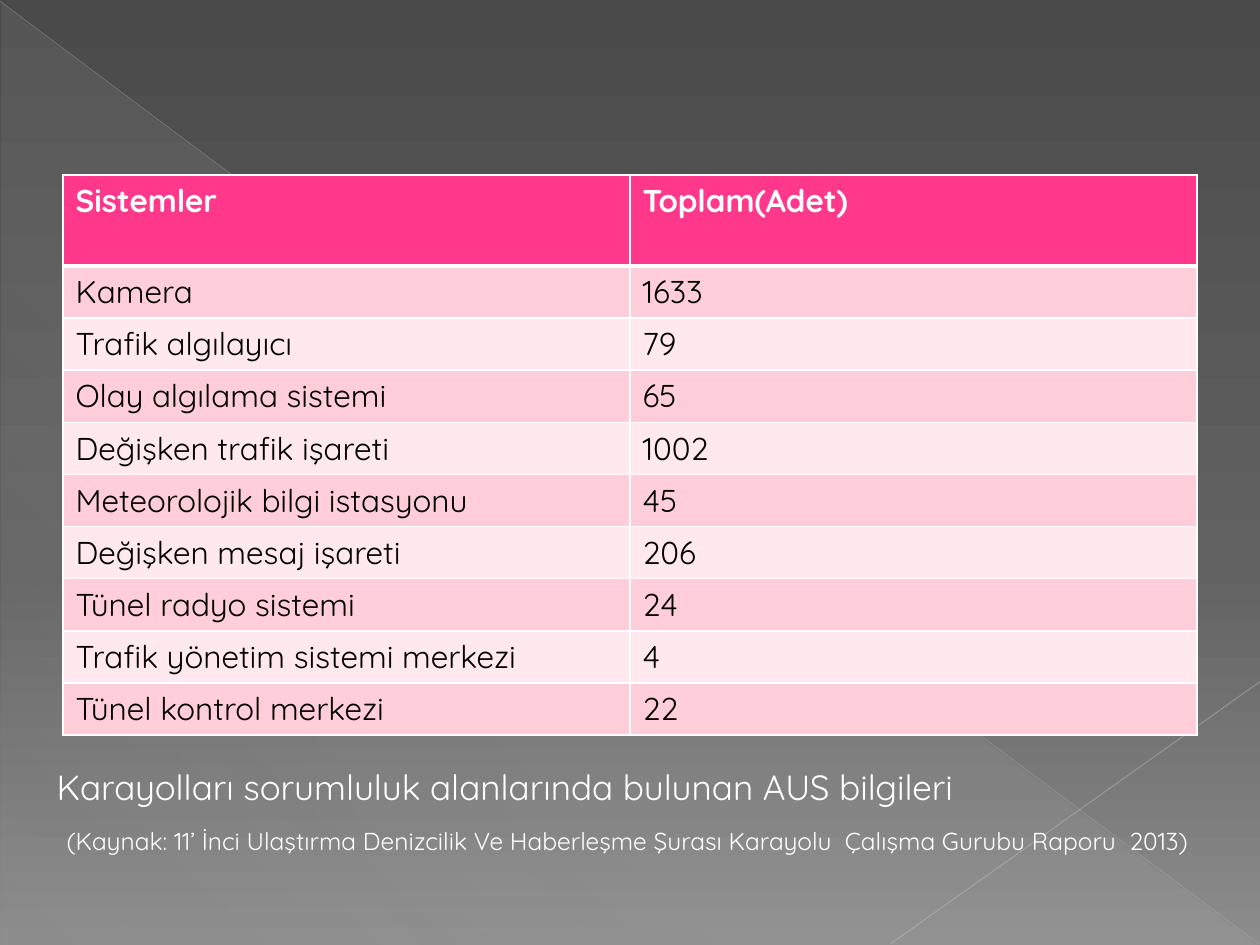
from lxml.etree import SubElement
from pptx import Presentation
from pptx.dml.color import RGBColor
from pptx.enum.shapes import MSO_CONNECTOR as Connector, MSO_SHAPE as Shape
from pptx.enum.text import MSO_AUTO_SIZE as AutoSize, PP_ALIGN as Align
from pptx.oxml.ns import qn
from pptx.util import Inches, Pt

FONT = "Quicksand"
COLORS = {
    "white": "FFFFFF",
    "black": "000000",
    "header": "FF388C",
    "odd_row": "FFCEDA",
    "even_row": "FFE8EE",
    "veil": "D2D2D2",
    "long_ray": "BFBFBF",
    "short_ray": "C6C6C6",
    "sky_top": "4A4A4A",
    "sky_middle": "626262",
    "sky_bottom": "8C8C8C",
}
SYSTEMS = [
    ("Sistemler", "Toplam(Adet)"),
    ("Kamera", "1633"),
    ("Trafik algılayıcı", "79"),
    ("Olay algılama sistemi", "65"),
    ("Değişken trafik işareti", "1002"),
    ("Meteorolojik bilgi istasyonu", "45"),
    ("Değişken mesaj işareti", "206"),
    ("Tünel radyo sistemi", "24"),
    ("Trafik yönetim sistemi merkezi", "4"),
    ("Tünel kontrol merkezi", "22"),
]


def rgb(name):
    return RGBColor.from_string(COLORS[name])


def add_color(parent, name, opacity=100):
    color = SubElement(parent, qn("a:srgbClr"), val=COLORS[name])
    if opacity < 100:
        SubElement(color, qn("a:alpha"), val=str(opacity * 1000))


def paint_gradient(fill, owner, stops, angle):
    """Fill with (position %, colour, opacity %) stops, angle clockwise."""
    fill.gradient()
    gradient = owner.find(".//" + qn("a:gradFill"))
    for child in list(gradient):
        gradient.remove(child)
    stop_list = SubElement(gradient, qn("a:gsLst"))
    for position, name, opacity in stops:
        stop = SubElement(stop_list, qn("a:gs"), pos=str(position * 1000))
        add_color(stop, name, opacity)
    SubElement(gradient, qn("a:lin"), ang=str(angle * 60000), scaled="0")


def add_veil(slide):
    veil = slide.shapes.add_shape(
        Shape.RIGHT_TRIANGLE, Inches(0.01), Inches(0.02), Inches(9.98), Inches(7.48))
    veil.shadow.inherit = False
    veil.line.fill.background()
    stops = [(0, "veil", 10), (70, "veil", 8), (100, "veil", 1)]
    paint_gradient(veil.fill, veil._element.spPr, stops, 133)


def add_ray(slide, start, end, name, width, opacity):
    ray = slide.shapes.add_connector(
        Connector.STRAIGHT, *(Inches(value) for value in start + end))
    ray.line.width = Pt(width)
    ray.line.color.rgb = rgb(name)
    properties = ray._element.spPr
    color = properties.find(".//" + qn("a:srgbClr"))
    SubElement(color, qn("a:alpha"), val=str(opacity * 1000))
    SubElement(properties, qn("a:effectLst"))


def add_run(paragraph, text, size, color, bold=False):
    run = paragraph.add_run()
    run.text = text
    run.font.name = FONT
    run.font.size = Pt(size)
    run.font.bold = bold
    run.font.color.rgb = rgb(color)


def set_borders(cell, bottom):
    """Draw white cell borders; they must stand before the cell's fill."""
    properties = cell._tc.get_or_add_tcPr()
    for index, (side, width) in enumerate(
            [("lnL", 1), ("lnR", 1), ("lnT", 1), ("lnB", bottom)]):
        border = SubElement(properties, qn("a:" + side), w=str(Pt(width)))
        add_color(SubElement(border, qn("a:solidFill")), "white")
        properties.insert(index, border)


def add_systems_table(slide):
    header_height, row_height = 0.72, 0.41
    table = slide.shapes.add_table(
        len(SYSTEMS), 2, Inches(0.5), Inches(1.39), Inches(9),
        Inches(header_height + row_height * (len(SYSTEMS) - 1))).table
    for row_index, values in enumerate(SYSTEMS):
        is_header = row_index == 0
        table.rows[row_index].height = Inches(header_height if is_header else row_height)
        stripe = "odd_row" if row_index % 2 else "even_row"
        for column, value in enumerate(values):
            cell = table.cell(row_index, column)
            cell.fill.solid()
            cell.fill.fore_color.rgb = rgb("header" if is_header else stripe)
            set_borders(cell, bottom=3 if is_header else 1)
            add_run(cell.text_frame.paragraphs[0], value, 18,
                    "white" if is_header else "black", is_header)
    for cell in table.rows[1].cells:
        cell._tc.tcPr.find(qn("a:lnT")).set("w", str(Pt(3)))


def add_note(slide, box, text, size, align):
    frame = slide.shapes.add_textbox(*(Inches(value) for value in box)).text_frame
    frame.word_wrap = True
    frame.auto_size = AutoSize.SHAPE_TO_FIT_TEXT
    frame.paragraphs[0].alignment = align
    add_run(frame.paragraphs[0], text, size, "white")


def main():
    deck = Presentation()
    deck.slide_width, deck.slide_height = Inches(10), Inches(7.5)
    slide = deck.slides.add_slide(deck.slide_layouts[6])

    sky = [(0, "sky_top", 100), (60, "sky_middle", 100), (100, "sky_bottom", 100)]
    paint_gradient(slide.background.fill, slide._element, sky, 90)
    add_veil(slide)
    add_ray(slide, (0, 0.01), (9.99, 7.49), "long_ray", 0.39, 35)
    add_ray(slide, (10, 5.41), (7.07, 7.49), "short_ray", 0.47, 45)

    add_systems_table(slide)
    add_note(slide, (0.35, 6.03, 9.65, 0.44),
             "Karayolları sorumluluk alanlarında bulunan AUS bilgileri", 20, Align.JUSTIFY)
    add_note(slide, (0.43, 6.51, 9.37, 0.57),
             "(Kaynak: 11’ İnci Ulaştırma Denizcilik Ve Haberleşme Şurası "
             "Karayolu  Çalışma Gurubu Raporu  2013)", 14, Align.LEFT)
    deck.save("out.pptx")


if __name__ == "__main__":
    main()
